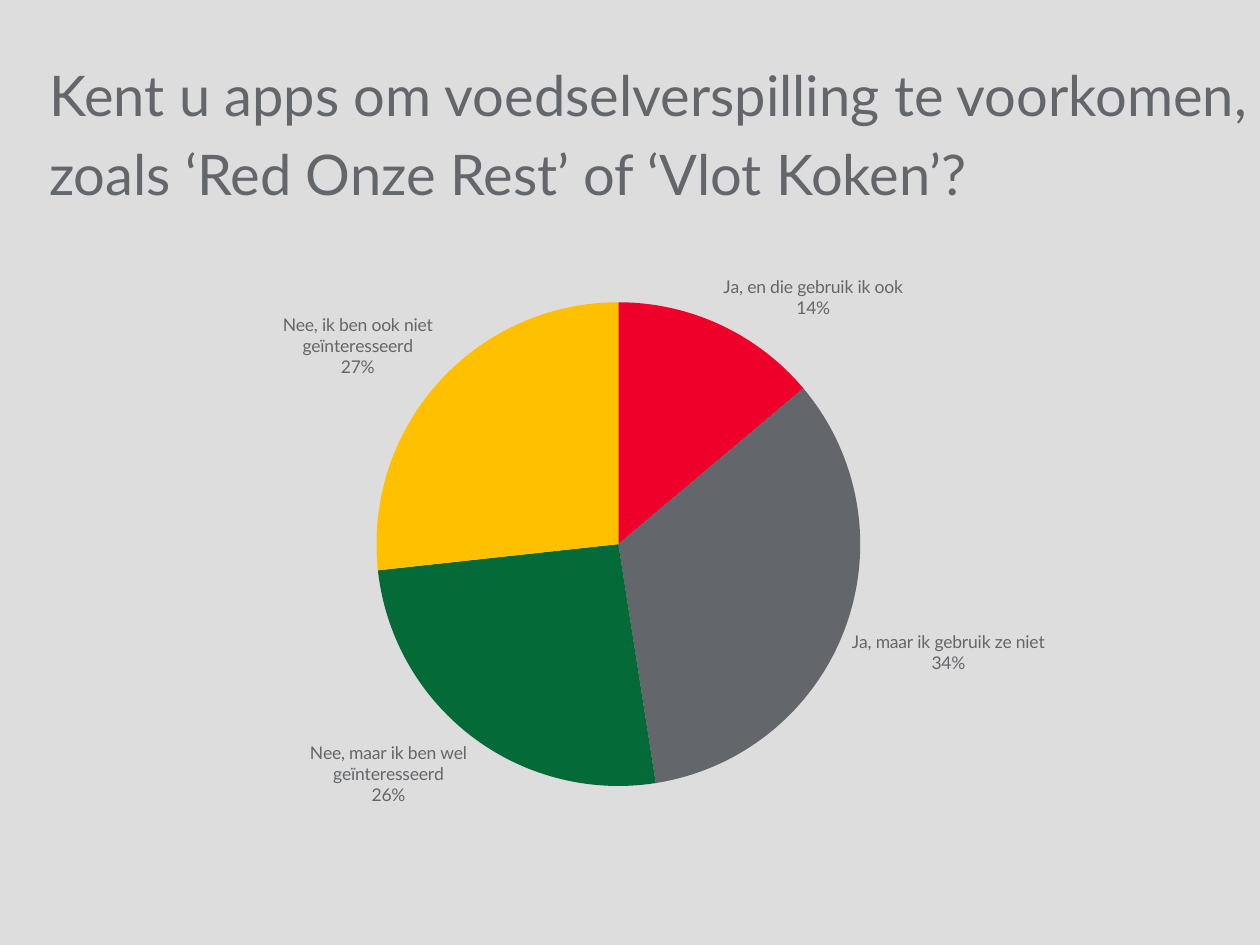
import lxml.etree
import pptx
import pptx.chart.data
import pptx.dml.color
import pptx.enum.chart
import pptx.enum.text
import pptx.oxml
import pptx.oxml.ns
import pptx.util

RGBColor = pptx.dml.color.RGBColor
BACKDROP = RGBColor(0xDD, 0xDD, 0xDD)
GREY = RGBColor(0x63, 0x66, 0x6A)
RED = RGBColor(0xEF, 0x00, 0x2B)
GREEN = RGBColor(0x04, 0x6A, 0x38)
YELLOW = RGBColor(0xFF, 0xC0, 0x00)

QUESTION = "Kent u apps om voedselverspilling te voorkomen, zoals ‘Red Onze Rest’ of ‘Vlot Koken’?"
ANSWERS = [
    ("Ja, en die gebruik ik ook", 0.14, RED),
    ("Ja, maar ik gebruik ze niet", 0.34, GREY),
    ("Nee, maar ik ben wel geïnteresseerd", 0.26, GREEN),
    ("Nee, ik ben ook niet geïnteresseerd", 0.27, YELLOW),
]


class SurveySlide:
    font_name = "Lato"
    ink = GREY

    def __init__(self, deck):
        self.width, self.height = deck.slide_width, deck.slide_height
        self.slide = deck.slides.add_slide(deck.slide_layouts[6])
        self.slide.background.fill.solid()
        self.slide.background.fill.fore_color.rgb = BACKDROP

    def place(self, left, top, width, height):
        return (int(left * self.width), int(top * self.height),
                int(width * self.width), int(height * self.height))

    def style(self, font, size):
        font.name = self.font_name
        font.size = pptx.util.Pt(size)
        font.color.rgb = self.ink

    def heading(self, wording, area, size, leading):
        frame = self.slide.shapes.add_textbox(*self.place(*area)).text_frame
        frame.word_wrap = True
        frame.vertical_anchor = pptx.enum.text.MSO_ANCHOR.TOP
        frame.margin_left = frame.margin_right = 0
        frame.margin_top = frame.margin_bottom = 0
        paragraph = frame.paragraphs[0]
        paragraph.line_spacing = pptx.util.Pt(leading)
        run = paragraph.add_run()
        run.text = wording
        self.style(run.font, size)

    def pie(self, answers, area, plot_share, size):
        data = pptx.chart.data.CategoryChartData(number_format="0%")
        data.categories = [answer for answer, _, _ in answers]
        data.add_series("Series 1", [share for _, share, _ in answers])
        chart = self.slide.shapes.add_chart(
            pptx.enum.chart.XL_CHART_TYPE.PIE, *self.place(*area), data).chart
        chart.has_legend = False
        chart.has_title = False
        self.style(chart.font, size)
        chart.plots[0].vary_by_categories = True
        series = chart.plots[0].series[0]
        for index, (_, _, color) in enumerate(answers):
            slice_format = series.points[index].format
            slice_format.fill.solid()
            slice_format.fill.fore_color.rgb = color
            slice_format.line.fill.background()
        self.label_slices(series, size)
        self.fix_plot(chart, plot_share)

    def label_slices(self, series, size):
        labels = series.data_labels
        labels.show_category_name = True
        labels.show_value = True
        labels.number_format = "0%"
        labels.number_format_is_linked = False
        labels.position = pptx.enum.chart.XL_LABEL_POSITION.OUTSIDE_END
        self.style(labels.font, size)
        qn = pptx.oxml.ns.qn
        separator = lxml.etree.Element(qn("c:separator"))
        separator.text = "\n"
        series._element.find(qn("c:dLbls")).find(qn("c:showBubbleSize")).addnext(separator)

    def fix_plot(self, chart, plot_share):
        qn = pptx.oxml.ns.qn
        plot_area = chart._chartSpace.chart.plotArea
        for layout in plot_area.findall(qn("c:layout")):
            plot_area.remove(layout)
        layout = lxml.etree.Element(qn("c:layout"))
        manual = lxml.etree.SubElement(layout, qn("c:manualLayout"))
        settings = [("layoutTarget", "inner"), ("xMode", "edge"), ("yMode", "edge")]
        settings += zip("xywh", plot_share)
        for tag, value in settings:
            lxml.etree.SubElement(manual, qn(f"c:{tag}")).set("val", str(value))
        plot_area.insert(0, layout)


def main():
    deck = pptx.Presentation()
    deck.slide_width = pptx.util.Inches(10)
    deck.slide_height = pptx.util.Inches(7.5)
    survey = SurveySlide(deck)
    margin = 0.039
    survey.heading(QUESTION, (margin, 0.052, 1 - margin, 0.157), 32, 45)
    survey.pie(ANSWERS, (margin, 0.263, 1 - 2 * margin, 0.632),
               (0.28, 0.09, 0.42, 0.81), 10)
    deck.save("out.pptx")


if __name__ == "__main__":
    main()
